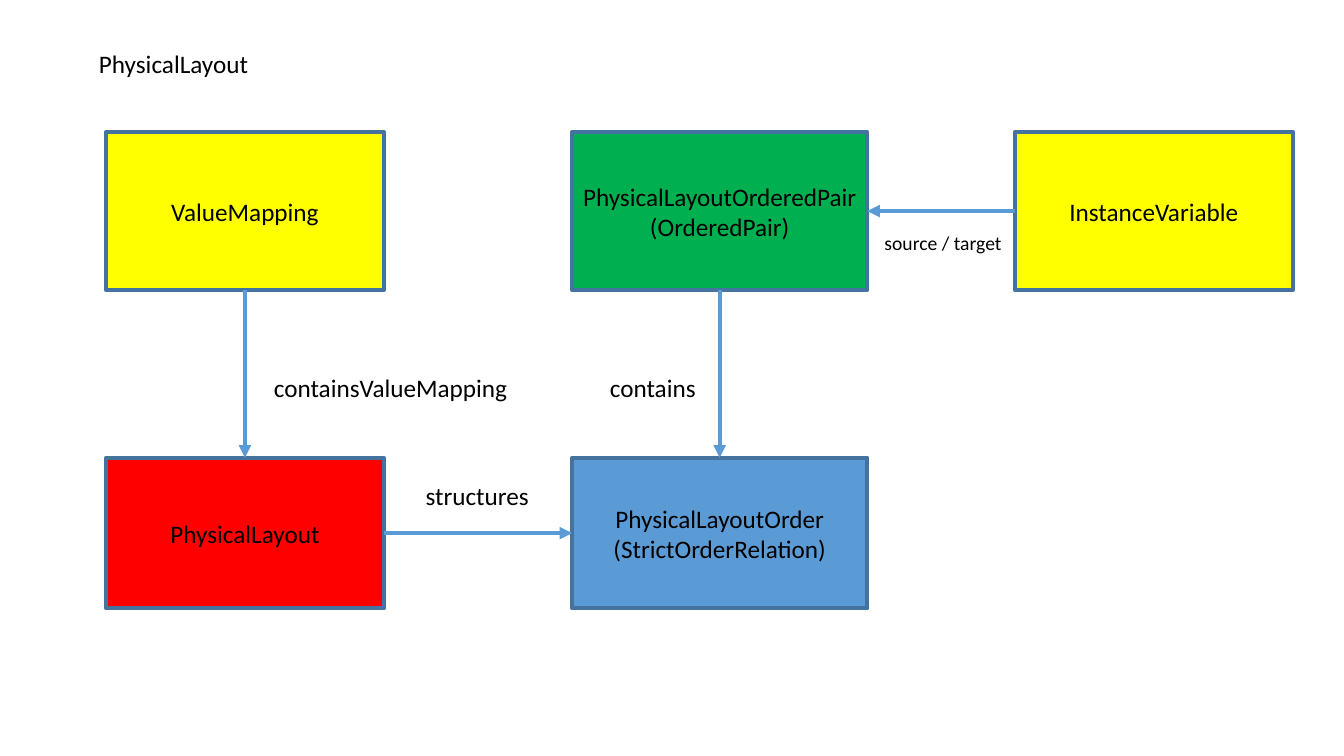
from lxml import etree
from pptx import Presentation
from pptx.dml.color import RGBColor
from pptx.enum.shapes import MSO_CONNECTOR, MSO_SHAPE
from pptx.enum.text import MSO_ANCHOR, MSO_AUTO_SIZE, PP_ALIGN
from pptx.oxml.ns import qn
from pptx.util import Pt

RECT = MSO_SHAPE.RECTANGLE
STRAIGHT = MSO_CONNECTOR.STRAIGHT
MIDDLE = MSO_ANCHOR.MIDDLE
FIT_SHAPE = MSO_AUTO_SIZE.SHAPE_TO_FIT_TEXT
LEFT, CENTER = PP_ALIGN.LEFT, PP_ALIGN.CENTER
# Connection sites of a rectangle
TOP_SITE, LEFT_SITE, BOTTOM_SITE, RIGHT_SITE = range(4)

COLORS = {
    "yellow": "FFFF00",
    "red": "FF0000",
    "green": "00B050",
    "blue": "5B9BD5",
    "outline": "43739E",
    "text": "000000",
}


def rgb(name):
    return RGBColor.from_string(COLORS[name])


def write(tf, lines, size, align):
    for i, line in enumerate(lines):
        p = tf.add_paragraph() if i else tf.paragraphs[0]
        p.text = line
        p.alignment = align
        p.font.name = "Calibri"
        p.font.size = Pt(size)
        p.font.color.rgb = rgb("text")


prs = Presentation()
prs.slide_width, prs.slide_height = Pt(960), Pt(540)
s = prs.slides.add_slide(prs.slide_layouts[6])

# Class boxes on a grid: columns are (left, width), rows are (top, height)
columns = [(75.8, 198.4), (408.7, 210.8), (725, 198.4)]
rows = [(94.3, 112.9), (327, 107.6)]
classes = [
    ("mapping", 0, 0, "yellow", ["ValueMapping"]),
    ("layout", 0, 1, "red", ["PhysicalLayout"]),
    ("order", 1, 1, "blue", ["PhysicalLayoutOrder", "(StrictOrderRelation)"]),
    ("pair", 1, 0, "green", ["PhysicalLayoutOrderedPair", "(OrderedPair)"]),
    ("variable", 2, 0, "yellow", ["InstanceVariable"]),
]
boxes = {}
for key, col, row, color, lines in classes:
    left, width = columns[col]
    top, height = rows[row]
    sp = s.shapes.add_shape(RECT, Pt(left), Pt(top), Pt(width), Pt(height))
    sp.shadow.inherit = False
    sp.fill.solid()
    sp.fill.fore_color.rgb = rgb(color)
    sp.line.color.rgb = rgb("outline")
    sp.line.width = Pt(3)
    sp.text_frame.vertical_anchor = MIDDLE
    write(sp.text_frame, lines, 18, CENTER)
    boxes[key] = sp

# Arrows glued to the boxes
arrows = [
    ("mapping", BOTTOM_SITE, "layout", TOP_SITE),
    ("layout", RIGHT_SITE, "order", LEFT_SITE),
    ("pair", BOTTOM_SITE, "order", TOP_SITE),
    ("variable", LEFT_SITE, "pair", RIGHT_SITE),
]
for start, start_site, end, end_site in arrows:
    arrow = s.shapes.add_connector(STRAIGHT, 0, 0, 0, 0)
    arrow.begin_connect(boxes[start], start_site)
    arrow.end_connect(boxes[end], end_site)
    arrow.line.color.rgb = rgb("blue")
    arrow.line.width = Pt(3)
    ln = arrow.line._get_or_add_ln()
    etree.SubElement(ln, qn("a:tailEnd"), type="triangle")
    etree.SubElement(arrow._element.spPr, qn("a:effectLst"))

# Title and relation labels: text, left, top, width, height, size, wrap
labels = [
    ("PhysicalLayout", 63.6, 31, 122.4, 29, 18, False),
    ("containsValueMapping", 188.6, 262.5, 183, 29, 18, False),
    ("structures", 296.9, 339.3, 89.3, 29, 18, False),
    ("contains", 428.6, 262.5, 76.3, 29, 18, False),
    ("source / target", 624.7, 161.3, 130.3, 24.5, 14, True),
]
for text, left, top, width, height, size, wrap in labels:
    sp = s.shapes.add_textbox(Pt(left), Pt(top), Pt(width), Pt(height))
    tf = sp.text_frame
    tf.word_wrap = wrap
    tf.auto_size = FIT_SHAPE
    write(tf, [text], size, LEFT)

prs.save("out.pptx")
